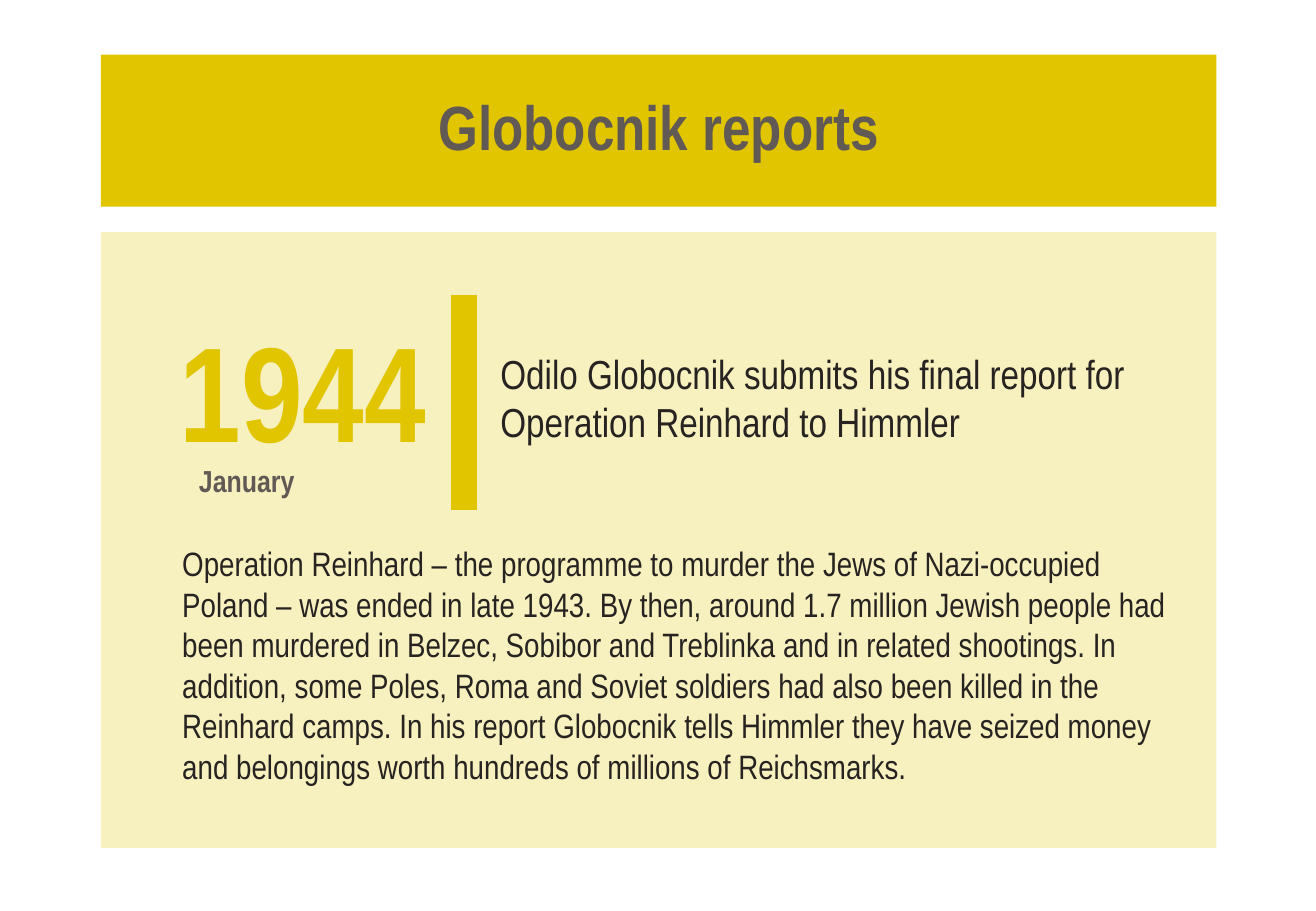
from lxml.etree import SubElement
from pptx import Presentation
from pptx.dml.color import RGBColor
from pptx.enum.shapes import MSO_CONNECTOR, MSO_SHAPE
from pptx.enum.text import MSO_ANCHOR, PP_ALIGN
from pptx.oxml.ns import qn
from pptx.util import Cm, Pt

GOLD = "E1C500"
GREY = "615954"
INK = "262321"
MARGIN, CONTENT_WIDTH = 2.11, 23.32


def colour(hex_code):
    return RGBColor.from_string(hex_code)


class TimelineCard:
    """Hold the text style and the slide that the elements go on."""

    font_name = "Arial Narrow"

    def __init__(self, slide):
        self.slide = slide

    def add_words(self, frame, text, size, ink, bold=False, anchor=MSO_ANCHOR.MIDDLE,
                  align=PP_ALIGN.LEFT, spacing=None):
        frame.word_wrap = True
        frame.vertical_anchor = anchor
        paragraph = frame.paragraphs[0]
        paragraph.alignment = align
        paragraph.line_spacing = spacing
        run = paragraph.add_run()
        run.text = text
        run.font.name = self.font_name
        run.font.size = Pt(size)
        run.font.bold = bold
        run.font.color.rgb = colour(ink)

    def title(self, left, top, width, height, text):
        heading = self.slide.shapes.title
        heading.left, heading.top = Cm(left), Cm(top)
        heading.width, heading.height = Cm(width), Cm(height)
        heading.fill.solid()
        heading.fill.fore_color.rgb = colour(GOLD)
        self.add_words(heading.text_frame, text, 37, GREY, bold=True,
                       align=PP_ALIGN.CENTER, spacing=0.9)

    def panel(self, left, top, width, height, fill, opacity):
        """Add a borderless rectangle; opacity is in percent."""
        panel = self.slide.shapes.add_shape(
            MSO_SHAPE.RECTANGLE, Cm(left), Cm(top), Cm(width), Cm(height))
        panel.shadow.inherit = False
        panel.line.fill.background()
        panel.fill.solid()
        panel.fill.fore_color.rgb = colour(fill)
        tint = panel._element.spPr.find(qn("a:solidFill")).find(qn("a:srgbClr"))
        SubElement(tint, qn("a:alpha")).set("val", str(opacity * 1000))

    def text(self, left, top, width, height, text, size, ink, **style):
        box = self.slide.shapes.add_textbox(Cm(left), Cm(top), Cm(width), Cm(height))
        self.add_words(box.text_frame, text, size, ink, **style)

    def vertical_bar(self, x, top, bottom, weight, ink):
        bar = self.slide.shapes.add_connector(
            MSO_CONNECTOR.STRAIGHT, Cm(x), Cm(top), Cm(x), Cm(bottom))
        bar.line.width = Pt(weight)
        bar.line.color.rgb = colour(ink)
        SubElement(bar._element.spPr, qn("a:effectLst"))


def main():
    deck = Presentation()
    deck.slide_width, deck.slide_height = Cm(27.51), Cm(19.05)
    card = TimelineCard(deck.slides.add_slide(deck.slide_layouts[5]))

    card.panel(MARGIN, 4.85, CONTENT_WIDTH, 12.88, GOLD, 25)
    card.title(MARGIN, 1.14, CONTENT_WIDTH, 3.18, "Globocnik reports")

    card.text(3.51, 5.94, 6.2, 4.78, "1944", 80, GOLD, bold=True, spacing=0.9)
    card.text(3.91, 9.53, 4.83, 1.02, "January", 18, GREY, bold=True,
              anchor=MSO_ANCHOR.TOP)
    card.vertical_bar(9.7, 6.17, 10.67, 15, GOLD)
    card.text(10.21, 5.92, 14.94, 4.78,
              "Odilo Globocnik submits his final report for "
              "Operation Reinhard to Himmler", 24, INK)
    card.text(3.56, 11.51, 21.41, 4.78,
              "Operation Reinhard – the programme to murder the Jews of "
              "Nazi-occupied Poland – was ended in late 1943. By then, around "
              "1.7 million Jewish people had been murdered in Belzec, Sobibor "
              "and Treblinka and in related shootings. In addition, some Poles, "
              "Roma and Soviet soldiers had also been killed in the Reinhard "
              "camps. In his report Globocnik tells Himmler they have seized "
              "money and belongings worth hundreds of millions of Reichsmarks.",
              20, INK)

    deck.save("out.pptx")


if __name__ == "__main__":
    main()
